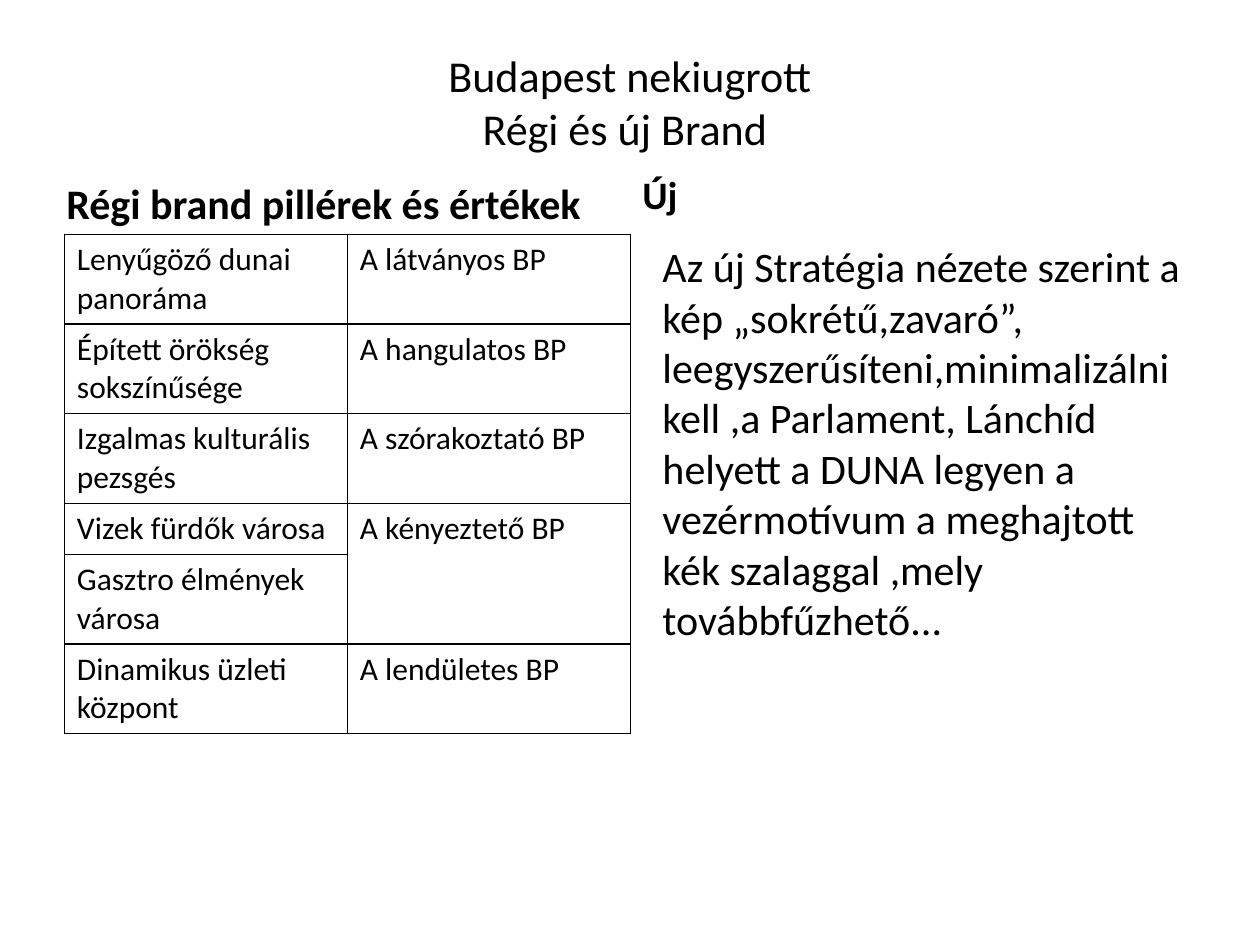
from lxml import etree
from pptx import Presentation
from pptx.dml.color import RGBColor
from pptx.enum.text import MSO_ANCHOR, PP_ALIGN
from pptx.oxml.ns import qn
from pptx.util import Pt

BLACK = RGBColor(0x00, 0x00, 0x00)
FONT = "Calibri"
TOP, MIDDLE, BOTTOM = MSO_ANCHOR.TOP, MSO_ANCHOR.MIDDLE, MSO_ANCHOR.BOTTOM
LEFT, CENTER = PP_ALIGN.LEFT, PP_ALIGN.CENTER

TITLE = "Budapest nekiugrott\vRégi és új Brand "
OLD_HEADING = "Régi brand pillérek és értékek"
NEW_HEADING = "Új"
NEW_BODY = (
    "Az új Stratégia nézete szerint a kép „sokrétű,zavaró”, "
    "leegyszerűsíteni,minimalizálni kell ,a Parlament, Lánchíd helyett "
    "a DUNA legyen a vezérmotívum a meghajtott kék szalaggal ,mely "
    "továbbfűzhető..."
)
PILLARS = [
    ("Lenyűgöző dunai panoráma", "A látványos BP"),
    ("Épített örökség sokszínűsége", "A hangulatos BP"),
    ("Izgalmas kulturális pezsgés", "A szórakoztató BP"),
    ("Vizek fürdők városa", "A kényeztető BP"),
    ("Gasztro élmények városa", ""),
    ("Dinamikus üzleti központ", "A lendületes BP"),
]
SHARED_ROW = 3
ROW_HEIGHTS = [51.2, 51.2, 51.2, 29.2, 51.2, 51.2]


def style_text(frame, size, bold=False, align=LEFT):
    """Format every run of a text frame."""
    for para in frame.paragraphs:
        para.alignment = align
        for span in para.runs:
            span.font.name = FONT
            span.font.size = Pt(size)
            span.font.bold = bold
            span.font.color.rgb = BLACK


def add_text(page, box, text, size, bold=False, align=LEFT, anchor=TOP):
    """Place a wrapped text box in the given box."""
    frame = page.shapes.add_textbox(*map(Pt, box)).text_frame
    frame.word_wrap = True
    frame.vertical_anchor = anchor
    frame.text = text
    style_text(frame, size, bold, align)


def add_borders(cell):
    """Draw a thin line on all four sides of a cell."""
    properties = cell._tc.get_or_add_tcPr()
    for position, side in enumerate(("a:lnL", "a:lnR", "a:lnT", "a:lnB")):
        line = etree.Element(qn(side), w=str(Pt(1)))
        fill = etree.SubElement(line, qn("a:solidFill"))
        etree.SubElement(fill, qn("a:srgbClr"), val=str(BLACK))
        properties.insert(position, line)


def add_pillar_table(page, box):
    """Place the table of old brand pillars in the given box."""
    table = page.shapes.add_table(len(PILLARS), 2, *map(Pt, box)).table
    table.first_row = False
    table.horz_banding = False
    for column in table.columns:
        column.width = Pt(box[2] / 2)
    for row, height, texts in zip(table.rows, ROW_HEIGHTS, PILLARS):
        row.height = Pt(height)
        for cell, text in zip(row.cells, texts):
            cell.text = text
            cell.fill.background()
            style_text(cell.text_frame, 18)
            add_borders(cell)
    table.cell(SHARED_ROW, 1).merge(table.cell(SHARED_ROW + 1, 1))


def add_old_brand(page, left, width):
    """Place the old brand column: heading and table."""
    add_text(page, (left - 6, 77, width, 57), OLD_HEADING, 24, True, anchor=BOTTOM)
    add_pillar_table(page, (left, 134, width, sum(ROW_HEIGHTS)))


def add_new_brand(page, left, width):
    """Place the new brand column: heading and indented body."""
    indent = 11.5
    add_text(page, (left, 100, width, 28), NEW_HEADING, 22.2, True, anchor=BOTTOM)
    add_text(page, (left + indent, 134, width - indent, 278), NEW_BODY, 24)


def main():
    """Build the slide and save the deck."""
    deck = Presentation()
    deck.slide_width, deck.slide_height = Pt(720), Pt(540)
    page = deck.slides.add_slide(deck.slide_layouts[6])
    add_text(page, (36, 21.6, 648, 72.7), TITLE, 25.2, align=CENTER, anchor=MIDDLE)
    add_old_brand(page, 36.8, 323.4)
    add_new_brand(page, 360, 324)
    deck.save("out.pptx")


if __name__ == "__main__":
    main()
